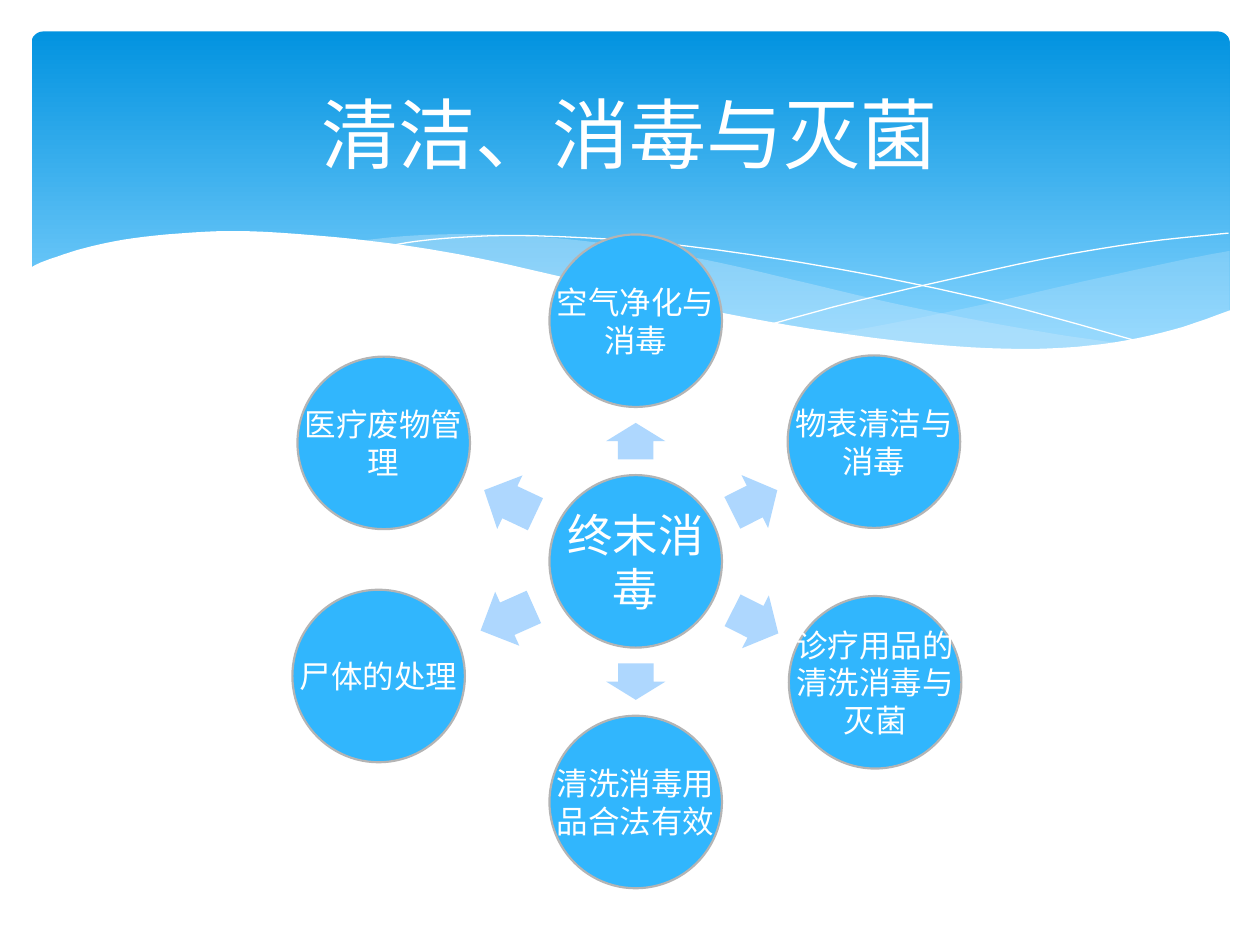
import math

from lxml import etree
from pptx import Presentation
from pptx.dml import color
from pptx.enum import shapes, text
from pptx.oxml import ns
from pptx.util import Pt

COLORS = {
    "sky_top": "0293E0",
    "sky_bottom": "83D3FE",
    "mist": "C6E7FC",
    "white": "FFFFFF",
    "circle": "31B6FD",
    "outline": "B4B4B4",
    "arrow": "AED7FE",
}
RGB = {name: color.RGBColor.from_string(value) for name, value in COLORS.items()}

presentation = Presentation()
presentation.slide_width, presentation.slide_height = Pt(720), Pt(540)
slide = presentation.slides.add_slide(presentation.slide_layouts[6])


def add_curve(edges, closed):
    points = []
    for edge in edges:
        padded = [edge[0], *edge, edge[-1]]
        for a, b, c, d in zip(padded, padded[1:], padded[2:], padded[3:]):
            for step in range(6):
                t = step / 6
                points.append([
                    5 * (2 * q + (r - p) * t + (2 * p - 5 * q + 4 * r - s) * t**2
                         + (3 * q - p - 3 * r + s) * t**3)
                    for p, q, r, s in zip(a, b, c, d)
                ])
        points.append([10 * value for value in edge[-1]])
    builder = slide.shapes.build_freeform(*points[0], scale=Pt(0.1))
    builder.add_line_segments(points[1:], close=closed)
    shape = builder.convert_to_shape()
    shape.shadow.inherit = False
    return shape


def add_label(left, top, width, height, inset, words, size):
    frame = slide.shapes.add_textbox(Pt(left), Pt(top), Pt(width), Pt(height)).text_frame
    frame.word_wrap = True
    frame.vertical_anchor = text.MSO_ANCHOR.MIDDLE
    frame.margin_left = frame.margin_right = Pt(inset)
    frame.margin_top = frame.margin_bottom = Pt(inset)
    paragraph = frame.paragraphs[0]
    paragraph.alignment = text.PP_ALIGN.CENTER
    run = paragraph.add_run()
    run.text = words
    run.font.name = "Calibri"
    run.font.size = Pt(size)
    run.font.color.rgb = RGB["white"]


sky = slide.shapes.add_shape(
    shapes.MSO_SHAPE.ROUNDED_RECTANGLE, Pt(18), Pt(18), Pt(684.7), Pt(194.4))
sky.adjustments[0] = 0.034
sky.shadow.inherit = False
sky.line.fill.background()
sky.fill.gradient()
sky.fill.gradient_angle = 270
for stop, name, position in zip(sky.fill.gradient_stops, ("sky_top", "sky_bottom"), (0, 0.9)):
    stop.color.rgb = RGB[name]
    stop.position = position

swell = [
    [(702.7, 143.3), (673.2, 149), (619.9, 160.6), (560.9, 174.2), (508.3, 185), (475.9, 190.8)],
    [(475.9, 190.8), (507.6, 195.1), (545, 198.7), (586.1, 200.2), (621.4, 198),
     (651.6, 193.7), (678.2, 186.5), (702.7, 177.8)],
]
band = [
    [(643, 196.6), (602.6, 190.8), (558, 182.9), (508.3, 172.8), (452.9, 159.8), (409.7, 149.8),
     (370.1, 142.6), (318.2, 136.1), (273.6, 133.9), (236.2, 134.6), (205.9, 137.5)],
    [(205.9, 137.5), (246.2, 143.3), (290.9, 151.9), (323.3, 159.8), (381.6, 172.8),
     (432.7, 183.6), (478.8, 191.5), (519.8, 197.3), (565.2, 200.2), (603.4, 200.2), (643, 196.6)],
]
for edges, opacity in ((swell, 29), (band, 40)):
    mist = add_curve(edges, True)
    mist.line.fill.background()
    mist.fill.solid()
    mist.fill.fore_color.rgb = RGB["mist"]
    fill_color = mist._element.spPr.find(ns.qn("a:solidFill"))[0]
    etree.SubElement(fill_color, ns.qn("a:alpha"), val=str(opacity * 1000))

falling_line = [(222.5, 140.4), (247.7, 136.8), (288.7, 134.6), (337.7, 136.1), (383.8, 139.7),
                (437.8, 146.9), (500.4, 157.7), (572.4, 173.5), (653, 195.8)]
rising_line = [(441.4, 185), (483.8, 173.5), (538.6, 160.6), (601.9, 146.9),
               (655.2, 138.2), (702, 133.2)]
for edge in (falling_line, rising_line):
    thread = add_curve([edge], False)
    thread.fill.background()
    thread.line.color.rgb = RGB["white"]
    thread.line.width = Pt(0)

wave_top = [(703.4, 177.1), (669.6, 188.6), (630, 196.6), (582.5, 199.4), (522.7, 195.8),
            (450.7, 185.8), (380.9, 172.1), (321.8, 158.4), (262.8, 145.4), (210.2, 137.5),
            (151.9, 132.5), (115.9, 132.5), (76.3, 136.1), (48.2, 141.8), (25.9, 149),
            (16.6, 153.4)]
wave = add_curve([wave_top, [(16.6, 236.9)], [(703.4, 236.9)]], True)
wave.line.fill.background()
wave.fill.solid()
wave.fill.fore_color.rgb = RGB["white"]

HUB_X, HUB_Y = 363.3, 320.8
DIAMETER = 98.6
ARROW_HEIGHT = 33.8
nodes = [
    ("终末消毒", 0, 0, 26, 2.6),
    ("空气净化与消毒", 0, -137.5, 18, 1.8),
    ("物表清洁与消毒", 136.1, -68.4, 18, 1.8),
    ("诊疗用品的清洗消毒与灭菌", 136.8, 69.1, 18, 1.8),
    ("清洗消毒用品合法有效", 0, 137.5, 18, 1.8),
    ("尸体的处理", -146.9, 65.5, 18, 1.8),
    ("医疗废物管理", -144, -67.7, 18, 1.8),
]
for words, dx, dy, size, inset in nodes:
    distance = math.hypot(dx, dy)
    if distance:
        length = 0.535 * (distance - DIAMETER)
        arrow = slide.shapes.add_shape(
            shapes.MSO_SHAPE.RIGHT_ARROW,
            Pt(HUB_X + dx / 2 - length / 2), Pt(HUB_Y + dy / 2 - ARROW_HEIGHT / 2),
            Pt(length), Pt(ARROW_HEIGHT))
        arrow.adjustments[0], arrow.adjustments[1] = 0.6, 0.5
        arrow.rotation = math.degrees(math.atan2(dy, dx)) % 360
        arrow.shadow.inherit = False
        arrow.fill.solid()
        arrow.fill.fore_color.rgb = RGB["arrow"]
        arrow.line.fill.background()
    left, top = HUB_X + dx - DIAMETER / 2, HUB_Y + dy - DIAMETER / 2
    circle = slide.shapes.add_shape(
        shapes.MSO_SHAPE.OVAL, Pt(left), Pt(top), Pt(DIAMETER), Pt(DIAMETER))
    circle.shadow.inherit = False
    circle.fill.solid()
    circle.fill.fore_color.rgb = RGB["circle"]
    circle.line.color.rgb = RGB["outline"]
    circle.line.width = Pt(1.25)
    add_label(left, top, DIAMETER, DIAMETER, inset, words, size)

add_label(36, 26.6, 648, 98.6, 3.6, "清洁、消毒与灭菌", 44)

presentation.save("out.pptx")
